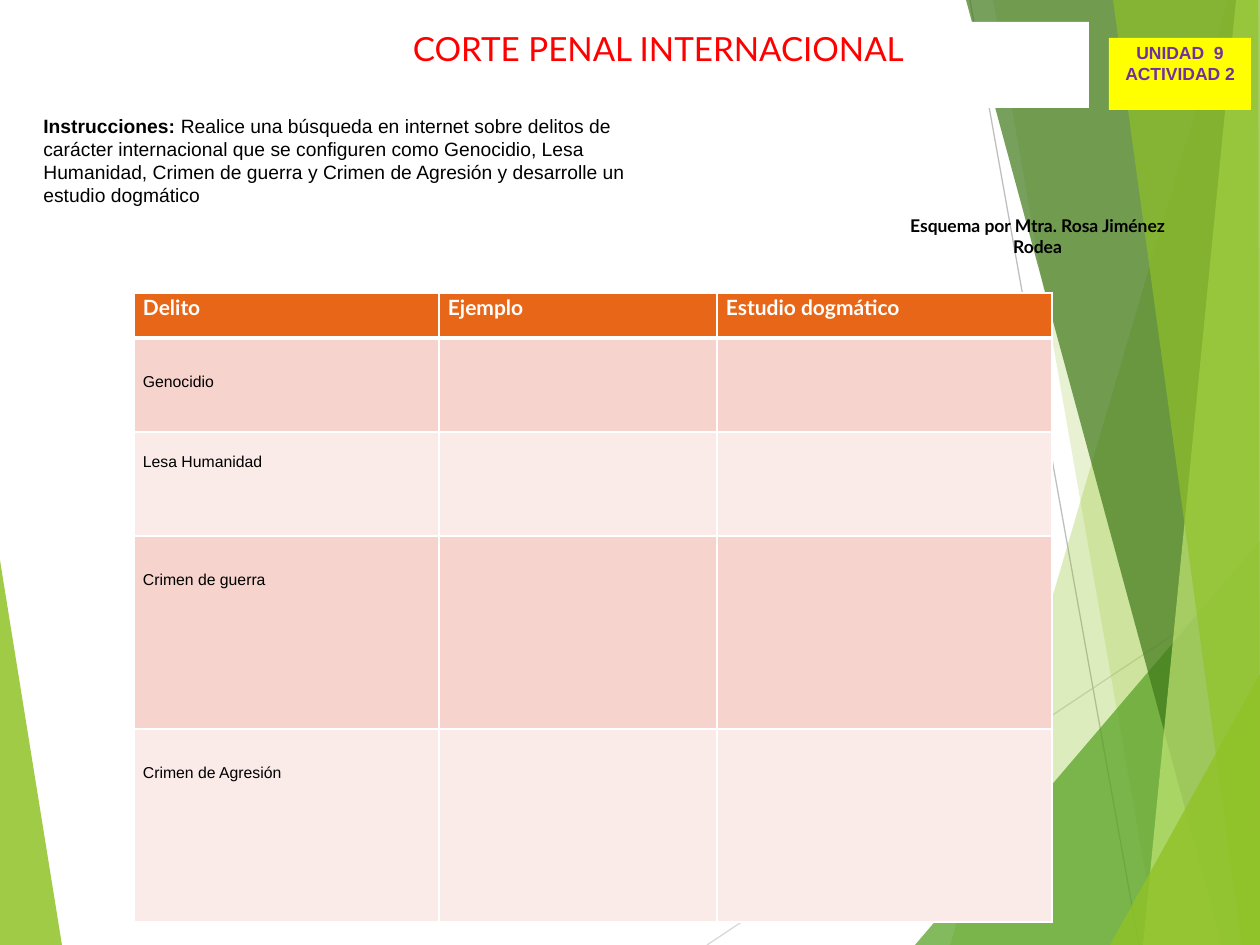
"""Build the activity slide on the International Criminal Court."""
import pptx
import pptx.util
import pptx.dml.color
import pptx.enum.shapes
import pptx.enum.text
import pptx.oxml
import pptx.oxml.ns
from lxml import etree

WIDTH, HEIGHT = 1260, 945
SCALE = 914400 / 126

COLORS = {
    "white": "FFFFFF", "black": "000000", "red": "FF0000", "yellow": "FFFF00",
    "purple": "7030A0", "header": "E76618", "band_dark": "F6D3CC",
    "band_light": "FAEAE8", "lime": "90C226", "green": "54A021",
    "forest": "3F7819", "pale": "C0E474", "gray": "BFBFBF", "light_gray": "D9D9D9",
}

LEFT_FACET = ("lime", 85, [(0, 560), (62, HEIGHT), (0, HEIGHT)])
RAYS = [
    ("light_gray", (707, HEIGHT, WIDTH, 577)),
    ("gray", (970, 0, 1139, HEIGHT)),
]
RIGHT_FACETS = [
    ("lime", 30, [(1228, 0), (950, HEIGHT), (WIDTH, HEIGHT), (WIDTH, 0)]),
    ("lime", 20, [(993, 0), (1158, HEIGHT), (WIDTH, HEIGHT), (WIDTH, 0)]),
    ("green", 72, [(915, HEIGHT), (WIDTH, 541), (WIDTH, HEIGHT)]),
    ("forest", 70, [(966, 0), (1222, HEIGHT), (WIDTH, HEIGHT), (WIDTH, 0)]),
    ("pale", 70, [(1236, 0), (1143, HEIGHT), (WIDTH, HEIGHT), (WIDTH, 0)]),
    ("lime", 65, [(1113, 0), (1242, HEIGHT), (WIDTH, HEIGHT), (1258, 0)]),
    ("lime", 80, [(1110, HEIGHT), (WIDTH, 674), (WIDTH, HEIGHT)]),
]

TITLE = "CORTE PENAL INTERNACIONAL"
UNIT = ["UNIDAD  9", "ACTIVIDAD 2"]
INSTRUCTIONS = (
    "Instrucciones: ",
    "Realice una búsqueda en internet sobre delitos de carácter internacional que se "
    "configuren como Genocidio, Lesa Humanidad, Crimen de guerra y Crimen de Agresión "
    "y desarrolle un estudio dogmático",
)
AUTHOR = "Esquema por Mtra. Rosa Jiménez Rodea"

HEADINGS = ["Delito", "Ejemplo", "Estudio dogmático"]
COLUMN_WIDTHS = [305, 278, 335]
HEADING_HEIGHT = 45
CRIMES = [
    ("Genocidio", 94, 34),
    ("Lesa Humanidad", 104, 20),
    ("Crimen de guerra", 193, 34),
    ("Crimen de Agresión", 193, 34),
]

FORMATS = {
    "title": ("red", {"name": "Lato", "size": 19, "bold": False}),
    "unit": ("purple", {"name": "Arial", "size": 10, "bold": True}),
    "label": ("black", {"name": "Arial", "size": 11, "bold": True}),
    "instructions": ("black", {"name": "Arial", "size": 11, "bold": False}),
    "author": ("black", {"name": "Lato", "size": 10, "bold": True}),
    "heading": ("white", {"name": "Lato", "size": 12, "bold": True}),
    "crime": ("black", {"name": "Arial", "size": 9, "bold": False}),
}
CENTER = pptx.enum.text.PP_ALIGN.CENTER


def px(length):
    return pptx.util.Emu(round(length * SCALE))


def rgb(color):
    return pptx.dml.color.RGBColor.from_string(COLORS[color])


def paint(fill, color):
    fill.solid()
    fill.fore_color.rgb = rgb(color)


def write(paragraph, text, style):
    color, font_format = FORMATS[style]
    run = paragraph.add_run()
    run.text = text
    run.font.color.rgb = rgb(color)
    for name, value in font_format.items():
        setattr(run.font, name, pptx.util.Pt(value) if name == "size" else value)


def prepare(frame, **margins):
    frame.word_wrap = True
    frame.auto_size = pptx.enum.text.MSO_AUTO_SIZE.NONE
    frame.vertical_anchor = pptx.enum.text.MSO_ANCHOR.TOP
    for name, value in margins.items():
        setattr(frame, name, px(value))


def add_facet(slide, color, opacity, points):
    builder = slide.shapes.build_freeform(*points[0], scale=SCALE)
    builder.add_line_segments(points[1:], close=True)
    facet = builder.convert_to_shape()
    facet.shadow.inherit = False
    facet.line.fill.background()
    paint(facet.fill, color)
    tint = facet.element.spPr.find(".//" + pptx.oxml.ns.qn("a:srgbClr"))
    etree.SubElement(tint, pptx.oxml.ns.qn("a:alpha"), val=str(opacity * 1000))


def add_ray(slide, color, ends):
    ray = slide.shapes.add_connector(
        pptx.enum.shapes.MSO_CONNECTOR.STRAIGHT, *map(px, ends))
    ray.line.color.rgb = rgb(color)
    ray.line.width = pptx.util.Pt(0.75)
    etree.SubElement(ray.element.spPr, pptx.oxml.ns.qn("a:effectLst"))


def add_borders(cell, top, bottom):
    properties = cell._tc.get_or_add_tcPr()
    widths = {"L": 1, "R": 1, "T": top, "B": bottom}
    for position, (side, width) in enumerate(widths.items()):
        properties.insert(position, pptx.oxml.parse_xml(
            f'<a:ln{side} {pptx.oxml.ns.nsdecls("a")} w="{width * 12700}"><a:solidFill>'
            f'<a:srgbClr val="{COLORS["white"]}"/></a:solidFill></a:ln{side}>'))


def add_crime_table(slide):
    rows = [(HEADINGS, HEADING_HEIGHT, 0, "heading", "header")]
    for index, (crime, height, top) in enumerate(CRIMES):
        band = "band_light" if index % 2 else "band_dark"
        rows.append(([crime, "", ""], height, top, "crime", band))
    table = slide.shapes.add_table(
        len(rows), len(HEADINGS), px(134), px(293),
        px(sum(COLUMN_WIDTHS)), px(sum(row[1] for row in rows))).table
    for column, width in zip(table.columns, COLUMN_WIDTHS):
        column.width = px(width)
    for index, (texts, height, top, style, color) in enumerate(rows):
        table.rows[index].height = px(height)
        for cell, text in zip(table.rows[index].cells, texts):
            margins = {"left": 9, "right": 9, "top": top, "bottom": 0}
            for side, value in margins.items():
                setattr(cell, f"margin_{side}", px(value))
            paint(cell.fill, color)
            add_borders(cell, 3 if index == 1 else 1, 3 if index == 0 else 1)
            if text:
                paragraph = cell.text_frame.paragraphs[0]
                paragraph.line_spacing = 1.07
                write(paragraph, text, style)


def add_instructions(slide):
    frame = slide.shapes.add_textbox(*map(px, (31, 108, 644, 106))).text_frame
    prepare(frame)
    for text, style in zip(INSTRUCTIONS, ("label", "instructions")):
        write(frame.paragraphs[0], text, style)


def add_title(slide):
    title = slide.shapes.title
    slide.shapes.element.append(title.element)
    for name, value in zip(("left", "top", "width", "height"), (228, 22, 861, 86)):
        setattr(title, name, px(value))
    paint(title.fill, "white")
    prepare(title.text_frame)
    title.text_frame.paragraphs[0].alignment = CENTER
    write(title.text_frame.paragraphs[0], TITLE, "title")


def add_unit(slide):
    unit = slide.shapes.add_shape(
        pptx.enum.shapes.MSO_SHAPE.RECTANGLE, *map(px, (1109, 38, 142, 72)))
    unit.shadow.inherit = False
    unit.line.fill.background()
    paint(unit.fill, "yellow")
    frame = unit.text_frame
    prepare(frame, margin_left=8, margin_right=8, margin_top=4, margin_bottom=4)
    for index, text in enumerate(UNIT):
        paragraph = frame.add_paragraph() if index else frame.paragraphs[0]
        paragraph.alignment = CENTER
        write(paragraph, text, "unit")


def add_author(slide):
    frame = slide.shapes.add_textbox(*map(px, (877, 209, 321, 55))).text_frame
    prepare(frame)
    frame.paragraphs[0].alignment = CENTER
    write(frame.paragraphs[0], AUTHOR, "author")


def main():
    deck = pptx.Presentation()
    deck.slide_width, deck.slide_height = px(WIDTH), px(HEIGHT)
    slide = deck.slides.add_slide(deck.slide_layouts[5])
    add_facet(slide, *LEFT_FACET)
    for ray in RAYS:
        add_ray(slide, *ray)
    for facet in RIGHT_FACETS:
        add_facet(slide, *facet)
    for add_part in (add_crime_table, add_instructions, add_title, add_unit, add_author):
        add_part(slide)
    deck.save("out.pptx")


if __name__ == "__main__":
    main()
